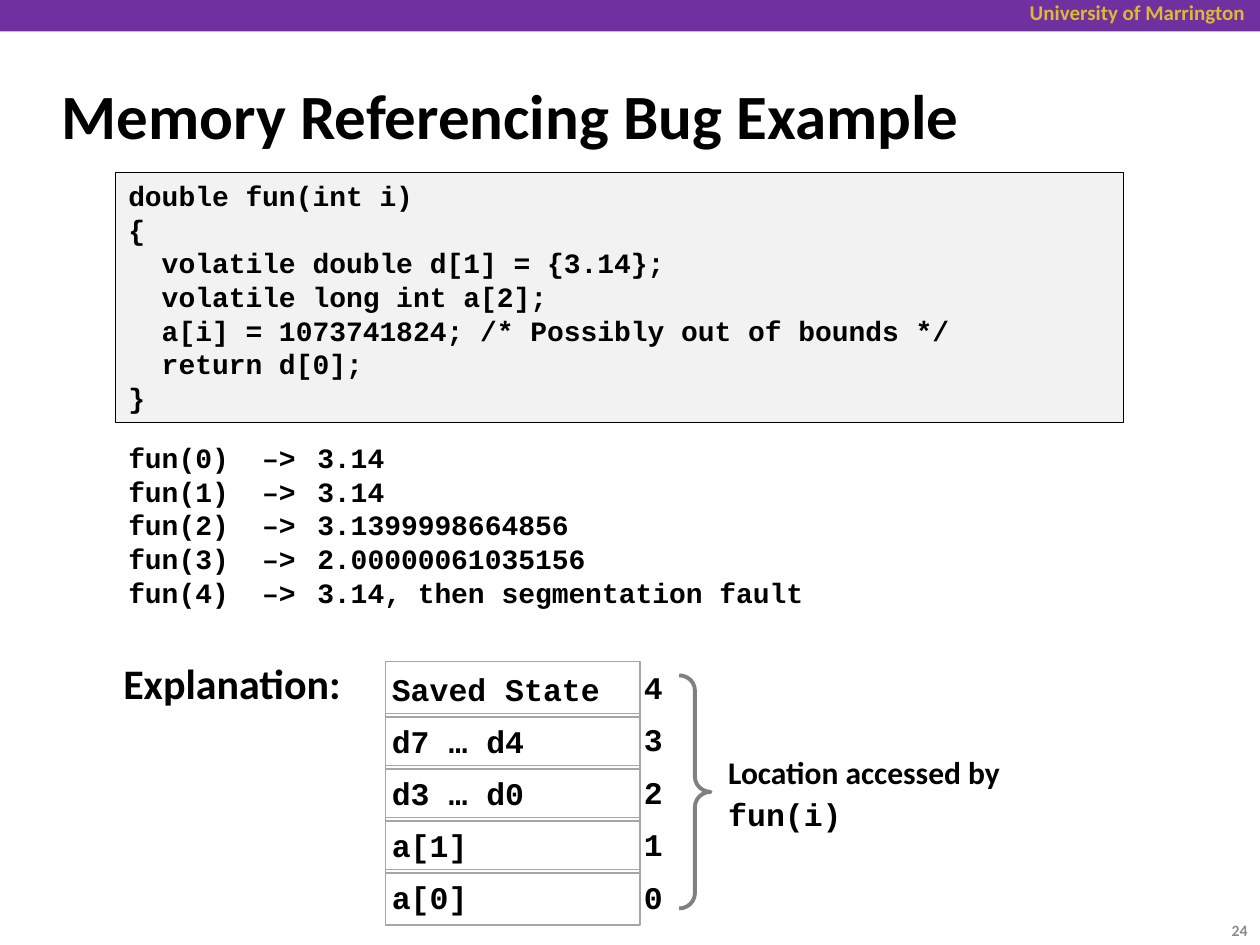
"""Build the slide on a memory referencing bug, on a grid of 100 columns by 75 rows."""
from pptx import Presentation
from pptx.dml.color import RGBColor
from pptx.enum.shapes import MSO_SHAPE
from pptx.enum.text import MSO_ANCHOR, MSO_AUTO_SIZE, PP_ALIGN
from pptx.util import Inches, Pt

RECTANGLE, BRACE = MSO_SHAPE.RECTANGLE, MSO_SHAPE.RIGHT_BRACE
TOP, MIDDLE = MSO_ANCHOR.TOP, MSO_ANCHOR.MIDDLE
LEFT, RIGHT = PP_ALIGN.LEFT, PP_ALIGN.RIGHT
NO_FIT = MSO_AUTO_SIZE.NONE
SANS, MONO = "Calibri", "Courier New"
BLACK, GRAY = "000000", "A6A6A6"
TITLE_ONLY = 5

CODE = [
    "double fun(int i)",
    "{",
    "  volatile double d[1] = {3.14};",
    "  volatile long int a[2];",
    "  a[i] = 1073741824; /* Possibly out of bounds */",
    "  return d[0];",
    "}",
]
RESULTS = ["3.14", "3.14", "3.1399998664856", "2.00000061035156",
           "3.14, then segmentation fault"]
STACK = ["Saved State", "d7 … d4", "d3 … d0", "a[1]", "a[0]"]


def color(value):
    """Turn a hex string into a colour."""
    return RGBColor.from_string(value)


class SlideBuilder:
    """Hold the grid, the text style and the current slide."""

    def __init__(self, presentation, columns=100, rows=75):
        """Add a title slide and measure its grid."""
        self.column = presentation.slide_width / columns
        self.row = presentation.slide_height / rows
        self.slide = presentation.slides.add_slide(presentation.slide_layouts[TITLE_ONLY])
        self.shapes = self.slide.shapes

    def place(self, left, top, width, height):
        """Convert grid units to slide lengths."""
        return (round(left * self.column), round(top * self.row),
                round(width * self.column), round(height * self.row))

    def fill_text(self, shape, lines, size, font=SANS, ink=BLACK, align=LEFT,
                  anchor=TOP, wrap=True, inset=0.1, spacing=None):
        """Fill a shape with lines, each a string or a list of (text, font) runs."""
        frame = shape.text_frame
        frame.auto_size, frame.word_wrap = NO_FIT, wrap
        frame.vertical_anchor = anchor
        frame.margin_left = frame.margin_right = Inches(inset)
        frame.margin_top = frame.margin_bottom = Inches(0.05)
        for index, line in enumerate(lines):
            paragraph = frame.add_paragraph() if index else frame.paragraphs[0]
            paragraph.alignment, paragraph.line_spacing = align, spacing
            for text, face in [(line, font)] if isinstance(line, str) else line:
                run = paragraph.add_run()
                run.text = text
                run.font.name, run.font.size, run.font.bold = face, Pt(size), True
                run.font.color.rgb = color(ink)

    def title(self, area, text):
        """Move and fill the title placeholder."""
        shape = self.shapes.title
        shape.left, shape.top, shape.width, shape.height = self.place(*area)
        self.fill_text(shape, [text], 36, anchor=MIDDLE)

    def text(self, area, lines, size, **style):
        """Add a text box."""
        self.fill_text(self.shapes.add_textbox(*self.place(*area)), lines, size, **style)

    def shape(self, area, kind=RECTANGLE, fill=None, line=None, weight=1, parent=None):
        """Add a preset shape, in a group if one is given."""
        shape = (parent or self.slide).shapes.add_shape(kind, *self.place(*area))
        shape.shadow.inherit = False
        if fill:
            shape.fill.solid()
            shape.fill.fore_color.rgb = color(fill)
        else:
            shape.fill.background()
        if line:
            shape.line.color.rgb = color(line)
            shape.line.width = Pt(weight)
        else:
            shape.line.fill.background()
        return shape

    def stack(self, left, top, labels):
        """Add a group of stacked memory cells with their indices."""
        group = self.shapes.add_group_shape()
        for position, label in enumerate(labels):
            cell = self.shape((left, top + 4.13 * position, 20.2, 4.4),
                              line=GRAY, parent=group)
            self.fill_text(cell, [label], 18, font=MONO, anchor=MIDDLE,
                           wrap=False, inset=0.05)
            self.text((left + 20, top + 4.17 * position, 2.5, 4),
                      [str(len(labels) - 1 - position)], 18,
                      font=MONO, wrap=False, inset=0.05)


def main():
    """Build and save the slide."""
    presentation = Presentation()
    presentation.slide_width, presentation.slide_height = Inches(10), Inches(7.5)
    builder = SlideBuilder(presentation)

    builder.shape((0, 0, 100, 2.5), fill="7030A0")
    builder.text((73.3, -0.5, 26.5, 3), ["University of Marrington"], 12,
                 ink="DCB834", align=RIGHT)
    builder.title((3.9, 4.9, 91.9, 8.3), "Memory Referencing Bug Example")
    builder.text((93.3, 71.8, 6.7, 4), ["24"], 9, ink="8C8C8C", align=RIGHT, anchor=MIDDLE)

    code = builder.shape((9.2, 13.7, 80, 19.8), fill="F2F2F2", line=BLACK, weight=0.5)
    builder.fill_text(code, CODE, 16, font=MONO)
    results = builder.shape((9.2, 34.5, 80, 14.4), fill="FFFFFF")
    builder.fill_text(results, [f"fun({index})  –>\t{value}"
                                for index, value in enumerate(RESULTS)], 16, font=MONO)

    builder.text((8.8, 51.7, 19.5, 5), ["Explanation:"], 24, wrap=False)
    builder.stack(30.6, 52.5, STACK)
    brace = builder.shape((53.9, 53.6, 2.5, 18.5), kind=BRACE, line="808080", weight=2.25)
    brace.adjustments[0] = 0.48
    builder.text((57.3, 59, 23, 7.7),
                 [[("Location accessed by ", SANS), ("fun(i)", MONO)]], 18,
                 inset=0.05, spacing=1.1)
    presentation.save("out.pptx")


if __name__ == "__main__":
    main()
